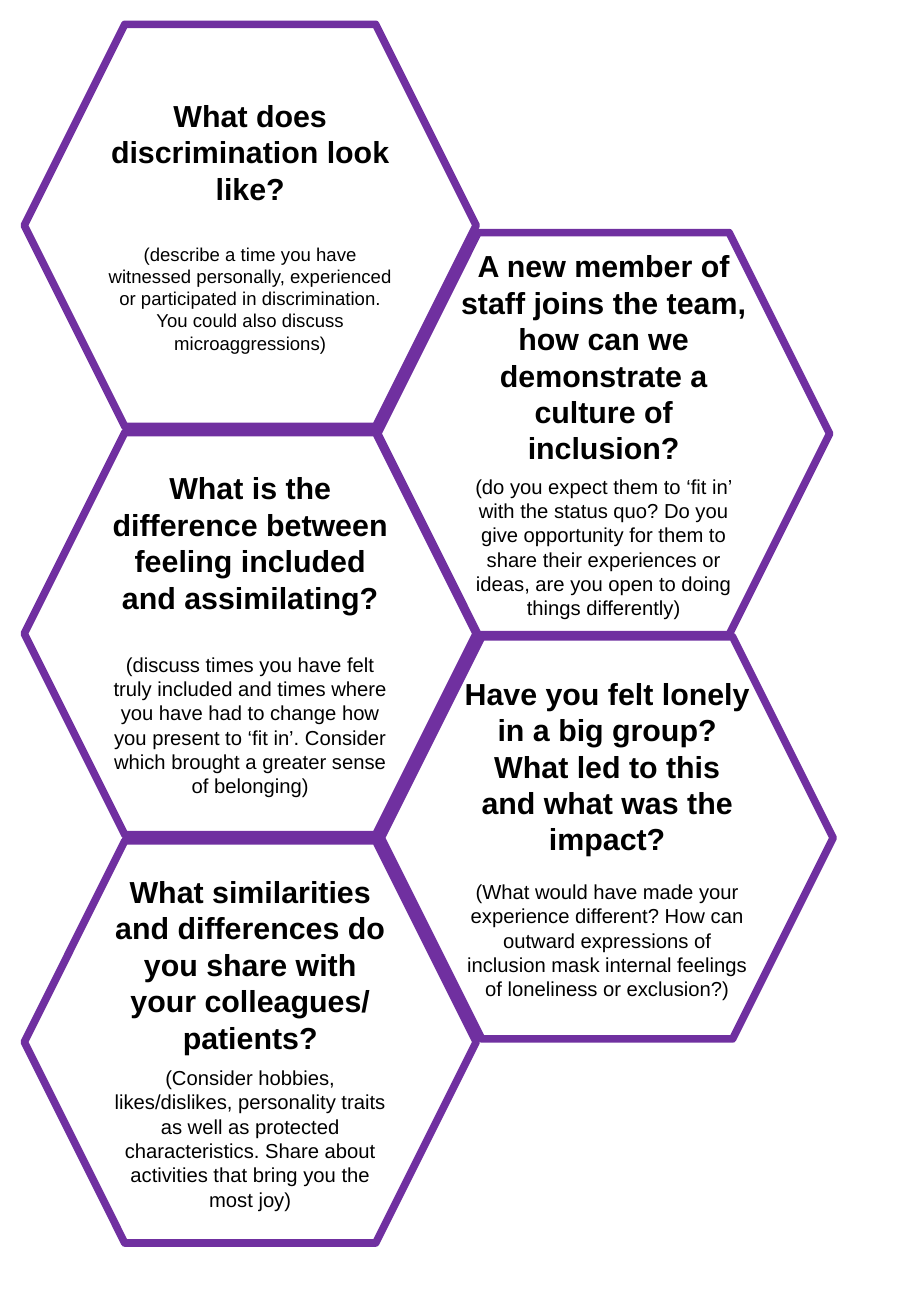
from dataclasses import dataclass
from pptx import Presentation
from pptx.dml.color import RGBColor
from pptx.enum.shapes import MSO_SHAPE
from pptx.enum.text import MSO_ANCHOR, PP_ALIGN
from pptx.util import Inches, Pt


@dataclass(frozen=True)
class Theme:
    """Colours, font and type sizes of the sheet."""
    font: str = "Arial"
    ink: RGBColor = RGBColor(0, 0, 0)
    paper: RGBColor = RGBColor(255, 255, 255)
    edge: RGBColor = RGBColor(0x70, 0x30, 0xA0)
    width: float = 4.5
    head: int = 18
    note: int = 12
    small: int = 11
    lead: float = 1.2


def write(par, text, *, theme, size, bold=False, gap=0):
    """Fill a paragraph with formatted, centred text."""
    par.alignment = PP_ALIGN.CENTER
    par.line_spacing = Pt(size * theme.lead)
    par.space_before = Pt(gap)
    run = par.add_run()
    run.text = text
    font = run.font
    font.name, font.size, font.bold = theme.font, Pt(size), bold
    font.color.rgb = theme.ink


class Sheet:
    """Draw cells of a honeycomb on one slide."""
    start = 0.2
    col_step, row_step = 2.91, 3.36
    wide, high = 3.72, 3.31

    def __init__(self, slide, theme):
        """Keep the slide and its style."""
        self.slide, self.theme = slide, theme

    def cell(self, col, row, head, note, gap, size):
        """Add a hexagon with a question and a prompt."""
        look = self.theme
        left = self.start + col * self.col_step
        top = self.start + row * self.row_step
        hexa = self.slide.shapes.add_shape(
            MSO_SHAPE.HEXAGON, Inches(left), Inches(top),
            Inches(self.wide), Inches(self.high))
        hexa.shadow.inherit = False
        hexa.fill.solid()
        hexa.fill.fore_color.rgb = look.paper
        hexa.line.color.rgb = look.edge
        hexa.line.width = Pt(look.width)
        frame = hexa.text_frame
        frame.word_wrap = True
        frame.vertical_anchor = MSO_ANCHOR.MIDDLE
        write(frame.paragraphs[0], head, theme=look, size=look.head, bold=True)
        write(frame.add_paragraph(), note, theme=look, size=size, gap=gap)


def main():
    """Build the sheet of questions."""
    theme = Theme()
    deck = Presentation()
    deck.slide_width, deck.slide_height = Inches(7.5), Inches(10.83)
    sheet = Sheet(deck.slides.add_slide(deck.slide_layouts[6]), theme)
    cells = [
        (0, 0, "What does discrimination look like?",
         "(describe a time you have witnessed personally, experienced or "
         "participated in discrimination. You could also discuss "
         "microaggressions)", 21.6, theme.small),
        (1, 0.51, "A new member of staff joins the team, how can we "
         "demonstrate a culture of inclusion?",
         "(do you expect them to ‘fit in’ with the status quo? Do you give "
         "opportunity for them to share their experiences or ideas, are you "
         "open to doing things differently)", 4.8, theme.note),
        (0, 1, "What is the difference between feeling included and "
         "assimilating?",
         "(discuss times you have felt truly included and times where you "
         "have had to change how you present to ‘fit in’. Consider which "
         "brought a greater sense of belonging)", 21.6, theme.note),
        (1.01, 1.5, "Have you felt lonely in a big group? What led to this "
         "and what was the impact?",
         "(What would have made your experience different? How can outward "
         "expressions of inclusion mask internal feelings of loneliness or "
         "exclusion?)", 13.2, theme.note),
        (0, 2, "What similarities and differences do you share with your "
         "colleagues/ patients?",
         "(Consider hobbies, likes/dislikes, personality traits as well as "
         "protected characteristics. Share about activities that bring you "
         "the most joy)", 6, theme.note),
    ]
    for item in cells:
        sheet.cell(*item)
    deck.save("out.pptx")


if __name__ == "__main__":
    main()
